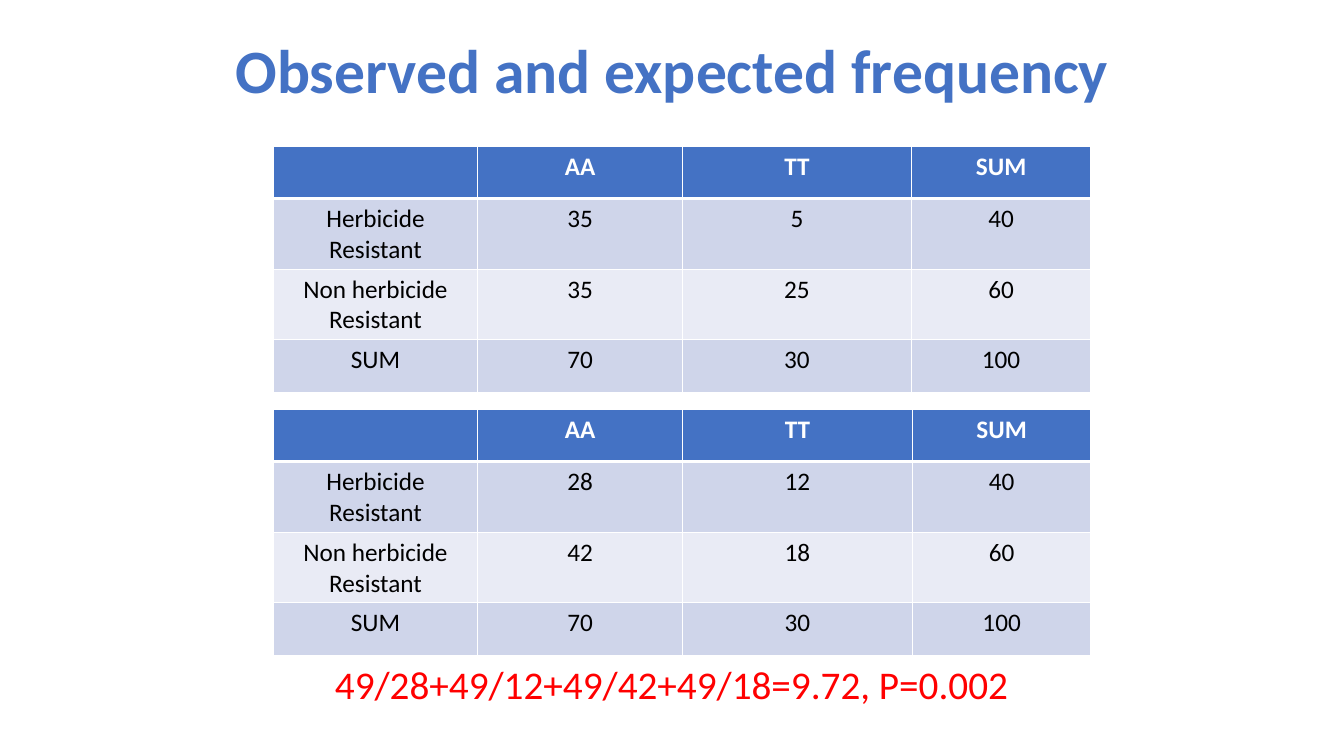
from collections import namedtuple
from dataclasses import dataclass

from lxml import etree
from pptx import Presentation
from pptx.dml.color import RGBColor
from pptx.enum.text import MSO_ANCHOR, PP_ALIGN
from pptx.oxml.ns import qn
from pptx.util import Inches, Pt

CENTER = PP_ALIGN.CENTER
TOP, MIDDLE = MSO_ANCHOR.TOP, MSO_ANCHOR.MIDDLE
BLANK_LAYOUT = 6

Box = namedtuple("Box", "left top width height")


@dataclass(frozen=True)
class Theme:
    font: str = "Calibri"
    blue: str = "4472C4"
    band_dark: str = "CFD5EA"
    band_light: str = "E9EBF5"
    white: str = "FFFFFF"
    black: str = "000000"
    red: str = "FF0000"
    title_size: int = 44
    result_size: int = 28
    table_size: int = 18
    thin_border: int = 1
    header_border: int = 3


THEME = Theme()
ROW_HEIGHT = 0.52
ROW_LABELS = ("Herbicide Resistant", "Non herbicide\nResistant")
OBSERVED = ((35, 5), (35, 25))
EXPECTED = ((28, 12), (42, 18))


def write_text(frame, text, *, size, color, bold=False, line_spacing=None):
    """Fill a text frame with one centred paragraph per line of text."""
    for index, line in enumerate(text.split("\n")):
        paragraph = frame.paragraphs[0] if index == 0 else frame.add_paragraph()
        paragraph.alignment = CENTER
        paragraph.line_spacing = line_spacing
        paragraph.font.size = Pt(size)
        if not line:
            continue
        run = paragraph.add_run()
        run.text = line
        run.font.name = THEME.font
        run.font.size = Pt(size)
        run.font.bold = bold
        run.font.color.rgb = RGBColor.from_string(color)


def add_text(slide, box, text, anchor=TOP, **text_format):
    frame = slide.shapes.add_textbox(*map(Inches, box)).text_frame
    frame.word_wrap = True
    frame.vertical_anchor = anchor
    write_text(frame, text, **text_format)


def set_borders(cell, bottom_width):
    """Draw white borders; they must precede the fill in the cell properties."""
    properties = cell._tc.get_or_add_tcPr()
    thin = THEME.thin_border
    widths = {"lnL": thin, "lnR": thin, "lnT": thin, "lnB": bottom_width}
    for position, (side, width) in enumerate(widths.items()):
        line = etree.Element(qn(f"a:{side}"), w=str(Pt(width)))
        fill = etree.SubElement(line, qn("a:solidFill"))
        etree.SubElement(fill, qn("a:srgbClr"), val=THEME.white)
        properties.insert(position, line)


def with_sums(counts):
    """Return the labelled rows of a contingency table with its totals."""
    rows = [("", "AA", "TT", "SUM")]
    for label, values in zip(ROW_LABELS, counts):
        rows.append((label, *values, sum(values)))
    totals = [sum(column) for column in zip(*counts)]
    rows.append(("SUM", *totals, sum(totals)))
    return rows


def add_frequency_table(slide, box, counts, column_widths):
    rows = with_sums(counts)
    graphic_frame = slide.shapes.add_table(
        len(rows), len(column_widths), *map(Inches, box))
    table = graphic_frame.table
    for column, width in zip(table.columns, column_widths):
        column.width = Inches(width)
    for row_index, values in enumerate(rows):
        header = row_index == 0
        band = THEME.band_dark if row_index % 2 else THEME.band_light
        table.rows[row_index].height = Inches(ROW_HEIGHT)
        for column_index, value in enumerate(values):
            cell = table.cell(row_index, column_index)
            cell.fill.solid()
            cell.fill.fore_color.rgb = RGBColor.from_string(
                THEME.blue if header else band)
            set_borders(cell, THEME.header_border if header else THEME.thin_border)
            write_text(cell.text_frame, str(value), size=THEME.table_size,
                       color=THEME.white if header else THEME.black, bold=header)
    graphic_frame.height = Inches(box.height)


def build_frequency_slide(presentation):
    slide = presentation.slides.add_slide(presentation.slide_layouts[BLANK_LAYOUT])
    add_text(slide, Box(0.92, 0, 11.5, 1.45), "Observed and expected frequency",
             anchor=MIDDLE, size=THEME.title_size, color=THEME.blue, bold=True,
             line_spacing=0.9)
    observed_box = Box(2.71, 1.45, 8.1, 2.44)
    add_frequency_table(slide, observed_box, OBSERVED, (2.03, 2.03, 2.27, 1.78))
    add_frequency_table(slide, observed_box._replace(top=4.06), EXPECTED,
                        (2.03, 2.03, 2.28, 1.77))
    add_text(slide, Box(2.51, 6.5, 8.3, 0.57),
             "49/28+49/12+49/42+49/18=9.72, P=0.002",
             size=THEME.result_size, color=THEME.red)


def main():
    presentation = Presentation()
    presentation.slide_width = Inches(13.33)
    presentation.slide_height = Inches(7.5)
    build_frequency_slide(presentation)
    presentation.save("out.pptx")


if __name__ == "__main__":
    main()
